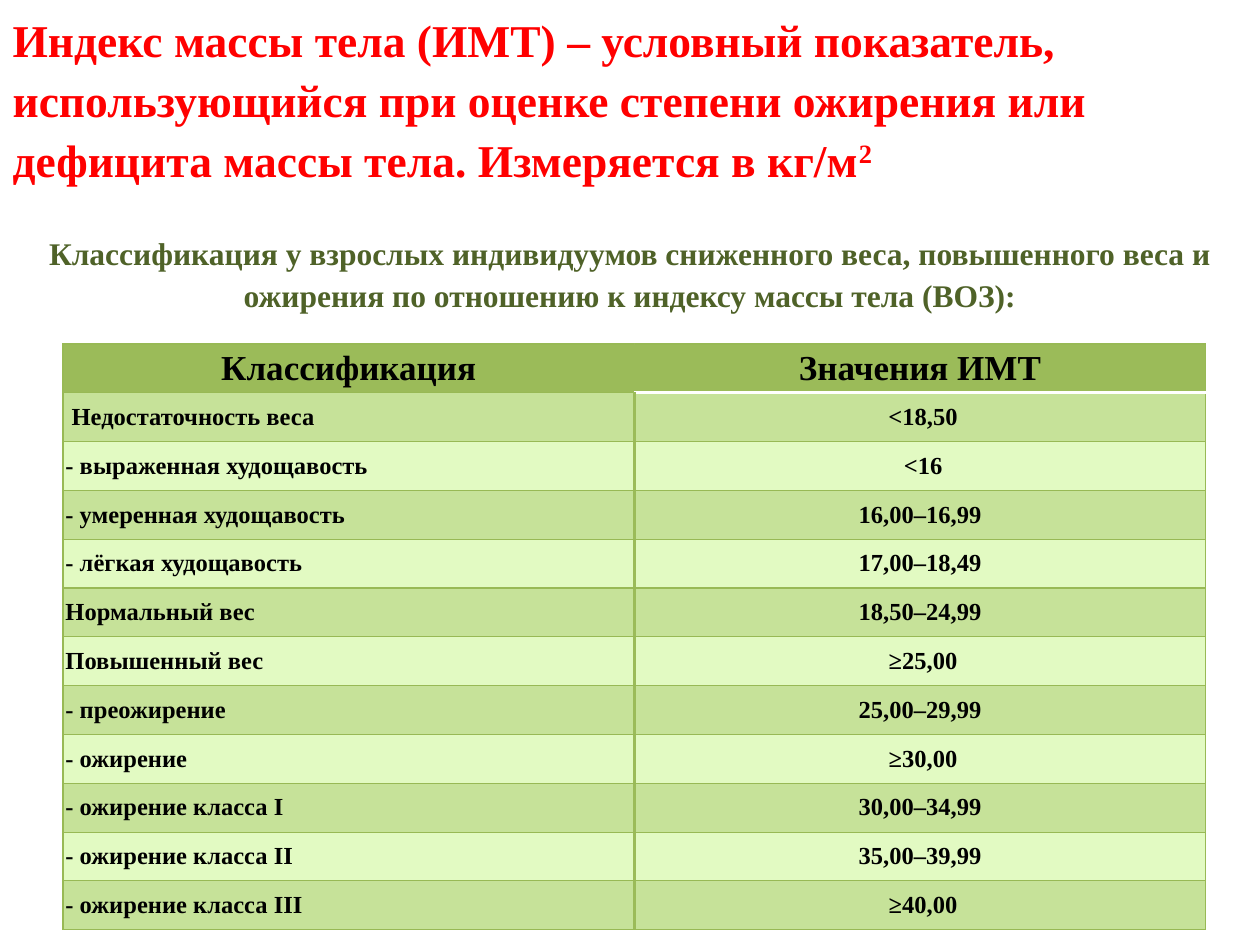
from lxml.etree import SubElement
from pptx import Presentation
from pptx.dml.color import RGBColor
from pptx.enum.text import MSO_ANCHOR, MSO_AUTO_SIZE, PP_ALIGN
from pptx.oxml.ns import qn
from pptx.util import Inches, Pt

# Content
TITLE = ("Индекс массы тела (ИМТ) – условный показатель, использующийся при "
         "оценке степени ожирения или дефицита массы тела. Измеряется в кг/м")
TITLE_POWER = "2"
SUBTITLE = ("Классификация у взрослых индивидуумов сниженного веса, повышенного "
            "веса и ожирения по отношению к индексу массы тела (ВОЗ):")
ROWS = [
    (" Классификация ", " Значения ИМТ "),
    (" Недостаточность веса", " <18,50"),
    ("- выраженная худощавость", " <16"),
    ("- умеренная худощавость", "16,00–16,99"),
    ("- лёгкая худощавость", "17,00–18,49"),
    ("Нормальный вес", "18,50–24,99"),
    ("Повышенный вес", " ≥25,00"),
    ("- преожирение", "25,00–29,99"),
    ("- ожирение", " ≥30,00"),
    ("- ожирение класса I", "30,00–34,99"),
    ("- ожирение класса II", "35,00–39,99"),
    ("- ожирение класса III", " ≥40,00"),
]

FONT = "Times New Roman"
RED = RGBColor(0xFF, 0x00, 0x00)
DARK_GREEN = RGBColor(0x4F, 0x62, 0x28)
BLACK = RGBColor(0x00, 0x00, 0x00)
WHITE = RGBColor(0xFF, 0xFF, 0xFF)
HEADER_GREEN = RGBColor(0x9B, 0xBB, 0x59)
BAND_GREEN = RGBColor(0xC6, 0xE2, 0x99)
PALE_GREEN = RGBColor(0xE2, 0xFA, 0xC2)
LINE_GREEN = RGBColor(0x98, 0xB9, 0x55)


def format_paragraph(p, size, color, align, spacing=1.0):
    p.alignment = align
    p.line_spacing = spacing
    for r in p.runs:
        r.font.name = FONT
        r.font.size = Pt(size)
        r.font.bold = True
        r.font.color.rgb = color


def set_border(cell, side, color, width):
    ln = SubElement(cell._tc.get_or_add_tcPr(), qn(f"a:ln{side}"), w=str(Pt(width)))
    fill = SubElement(ln, qn("a:solidFill"))
    SubElement(fill, qn("a:srgbClr"), val=str(color))


def border_style(row, col, side):
    inner = (col, side) in ((0, "R"), (1, "L"))
    if inner:
        return HEADER_GREEN, 2 if row else 0.75
    if col == 1 and (row, side) in ((0, "B"), (1, "T")):
        return WHITE, 2
    return LINE_GREEN, 0.75


prs = Presentation()
prs.slide_width, prs.slide_height = Inches(10), Inches(7.5)
s = prs.slides.add_slide(prs.slide_layouts[5])

# Title with the superscript power
title = s.shapes.title
title.left, title.top = Inches(0), Inches(0)
title.width, title.height = Inches(10), Inches(1.62)
tf = title.text_frame
tf.word_wrap = True
tf.auto_size = MSO_AUTO_SIZE.NONE
tf.vertical_anchor = MSO_ANCHOR.TOP
tf.text = TITLE
p = tf.paragraphs[0]
power = p.add_run()
power.text = TITLE_POWER
power._r.get_or_add_rPr().set("baseline", "30000")
format_paragraph(p, 26, RED, PP_ALIGN.LEFT, 1.1)

# Classification table
frame = s.shapes.add_table(len(ROWS), 2, Inches(0.5), Inches(2.73),
                           Inches(9.07), Inches(4.65))
table = frame.table
for i, row in enumerate(ROWS):
    for j, text in enumerate(row):
        cell = table.cell(i, j)
        cell.text = text
        cell.vertical_anchor = MSO_ANCHOR.MIDDLE
        cell.margin_left = cell.margin_right = Inches(0.02)
        cell.margin_top = cell.margin_bottom = Inches(0.02)
        centred = i == 0 or j == 1
        format_paragraph(cell.text_frame.paragraphs[0], 14 if i else 20, BLACK,
                         PP_ALIGN.CENTER if centred else PP_ALIGN.LEFT)
        for side in "LRTB":
            set_border(cell, side, *border_style(i, j, side))
        cell.fill.solid()
        band = BAND_GREEN if i % 2 else PALE_GREEN
        cell.fill.fore_color.rgb = band if i else HEADER_GREEN

# Subtitle above the table
subtitle = s.shapes.add_textbox(Inches(0), Inches(1.78), Inches(10), Inches(0.81))
tf = subtitle.text_frame
tf.word_wrap = True
tf.text = SUBTITLE
format_paragraph(tf.paragraphs[0], 18, DARK_GREEN, PP_ALIGN.CENTER, 1.1)

prs.save("out.pptx")
